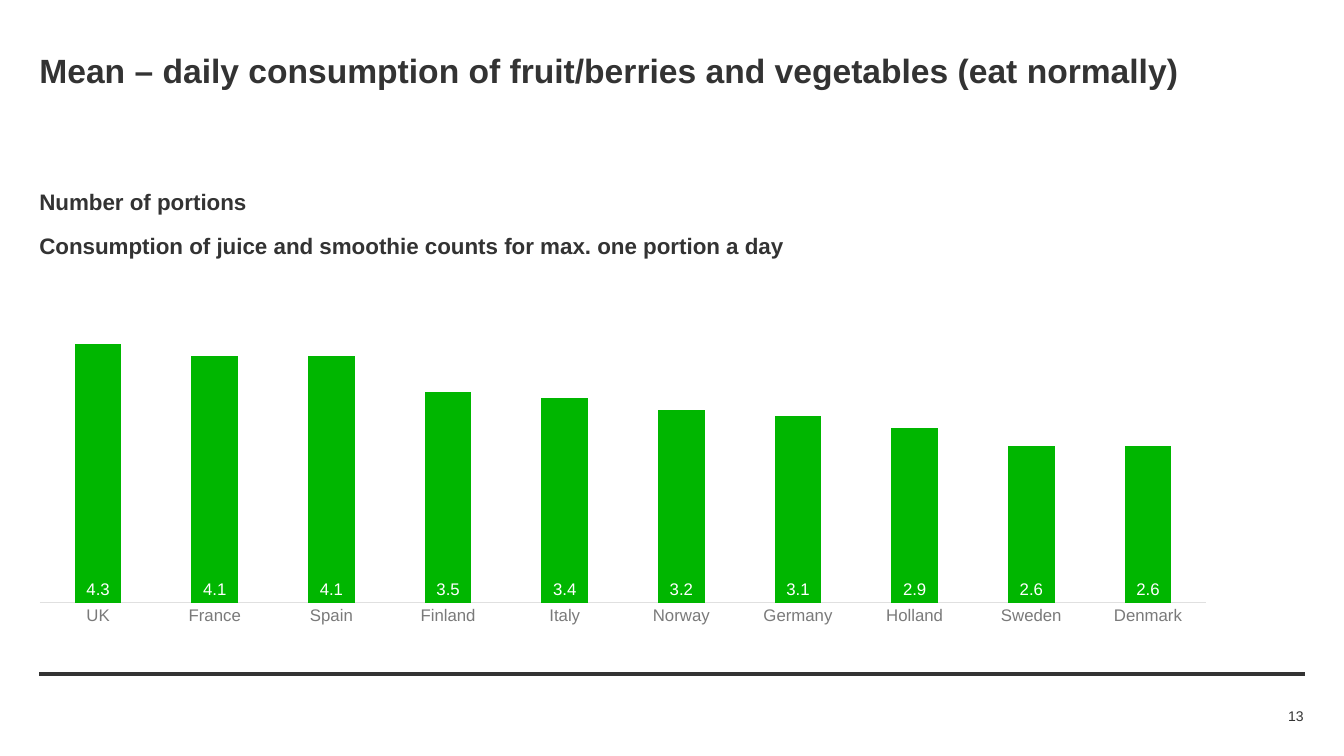
from dataclasses import dataclass

from lxml import etree
from pptx import Presentation
from pptx.chart.data import CategoryChartData
from pptx.dml.color import RGBColor
from pptx.enum.chart import XL_CHART_TYPE, XL_LABEL_POSITION, XL_TICK_MARK
from pptx.enum.shapes import MSO_CONNECTOR
from pptx.enum.text import MSO_ANCHOR, MSO_AUTO_SIZE, PP_ALIGN
from pptx.oxml.ns import qn
from pptx.util import Inches, Pt


@dataclass(frozen=True)
class Theme:
    font: str = "Arial"
    ink: str = "333333"
    bar: str = "00B600"
    axis_text: str = "7A7A7A"
    axis_line: str = "E0E0E0"
    label: str = "FFFFFF"
    title_size: int = 24
    subtitle_size: int = 16
    chart_size: int = 12
    small_size: int = 10


THEME = Theme()
LEFT, WIDTH = 0.39, 12.54

PORTIONS = {
    "UK": 4.3, "France": 4.1, "Spain": 4.1, "Finland": 3.5, "Italy": 3.4,
    "Norway": 3.2, "Germany": 3.1, "Holland": 2.9, "Sweden": 2.6, "Denmark": 2.6,
}


def rgb(color):
    return RGBColor.from_string(color)


def style_font(font, size, color, bold=False):
    font.name = THEME.font
    font.size = Pt(size)
    font.bold = bold
    font.color.rgb = rgb(color)


def place(sp, left, top, width, height):
    sp.left, sp.top = Inches(left), Inches(top)
    sp.width, sp.height = Inches(width), Inches(height)


def write(sp, lines, size, bold=False, align=PP_ALIGN.LEFT,
          anchor=MSO_ANCHOR.TOP, gap=0):
    """Fill a text shape with one paragraph per line, gap points apart."""
    tf = sp.text_frame
    tf.word_wrap = True
    tf.auto_size = MSO_AUTO_SIZE.NONE
    tf.vertical_anchor = anchor
    tf.margin_left = tf.margin_right = tf.margin_top = tf.margin_bottom = 0
    tf.text = "\n".join(lines)
    for i, p in enumerate(tf.paragraphs):
        p.alignment = align
        p.space_before = Pt(gap if i else 0)
        style_font(p.font, size, THEME.ink, bold)


def add_title(slide, text):
    sp = slide.shapes.title
    place(sp, LEFT, 0.47, WIDTH, 0.44)
    write(sp, [text], THEME.title_size, bold=True, anchor=MSO_ANCHOR.MIDDLE)


def add_text(slide, box, lines, size, **options):
    sp = slide.shapes.add_textbox(*map(Inches, box))
    write(sp, lines, size, **options)


def add_rule(slide, y):
    line = slide.shapes.add_connector(
        MSO_CONNECTOR.STRAIGHT, Inches(LEFT), Inches(y), Inches(12.94), Inches(y))
    line.line.color.rgb = rgb(THEME.ink)
    line.line.width = Pt(3)
    etree.SubElement(line._element.spPr, qn("a:effectLst"))


def set_plot_area(chart, x, y, w, h):
    """Fix the inner plot area, in fractions of the chart's size."""
    plot_area = chart._chartSpace.chart.plotArea
    for old in plot_area.findall(qn("c:layout")):
        plot_area.remove(old)
    layout = etree.Element(qn("c:layout"))
    plot_area.insert(0, layout)
    manual = etree.SubElement(layout, qn("c:manualLayout"))
    settings = [("layoutTarget", "inner"), ("xMode", "edge"), ("yMode", "edge"),
                ("x", x), ("y", y), ("w", w), ("h", h)]
    for name, value in settings:
        etree.SubElement(manual, qn(f"c:{name}")).set("val", str(value))


def add_portions_chart(slide):
    data = CategoryChartData(number_format="0.0")
    data.categories = list(PORTIONS)
    data.add_series("Series 1", list(PORTIONS.values()))
    box = map(Inches, (LEFT, 2.6, WIDTH, 3.66))
    chart = slide.shapes.add_chart(XL_CHART_TYPE.COLUMN_STACKED, *box, data).chart
    chart.has_title = False
    chart.has_legend = False
    style_font(chart.font, THEME.small_size, THEME.ink)
    set_plot_area(chart, 0, 0.107, 0.923, 0.817)

    countries = chart.category_axis
    countries.major_tick_mark = XL_TICK_MARK.NONE
    style_font(countries.tick_labels.font, THEME.chart_size, THEME.axis_text)
    countries.format.line.color.rgb = rgb(THEME.axis_line)
    countries.format.line.width = Pt(0.75)

    values = chart.value_axis
    values.minimum_scale, values.maximum_scale = 0, 5
    values.has_major_gridlines = False
    values.visible = False

    plot = chart.plots[0]
    plot.gap_width, plot.overlap = 150, 100
    plot.vary_by_categories = False
    series = plot.series[0]
    series.format.fill.solid()
    series.format.fill.fore_color.rgb = rgb(THEME.bar)
    labels = series.data_labels
    labels.show_value = True
    labels.position = XL_LABEL_POSITION.INSIDE_BASE
    labels.number_format = "0.0"
    labels.number_format_is_linked = False
    style_font(labels.font, THEME.chart_size, THEME.label)


def main():
    prs = Presentation()
    prs.slide_width, prs.slide_height = Inches(13.33), Inches(7.5)
    slide = prs.slides.add_slide(prs.slide_layouts[5])
    add_rule(slide, 6.69)
    add_title(slide, "Mean – daily consumption of fruit/berries and vegetables (eat normally)")
    add_text(slide, (LEFT, 1.87, WIDTH, 0.66),
             ["Number of portions",
              "Consumption of juice and smoothie counts for max. one portion a day"],
             THEME.subtitle_size, bold=True, gap=12)
    add_portions_chart(slide)
    add_text(slide, (11.87, 6.99, 1.06, 0.22), ["13"], THEME.small_size,
             align=PP_ALIGN.RIGHT, anchor=MSO_ANCHOR.MIDDLE)
    prs.save("out.pptx")


if __name__ == "__main__":
    main()
